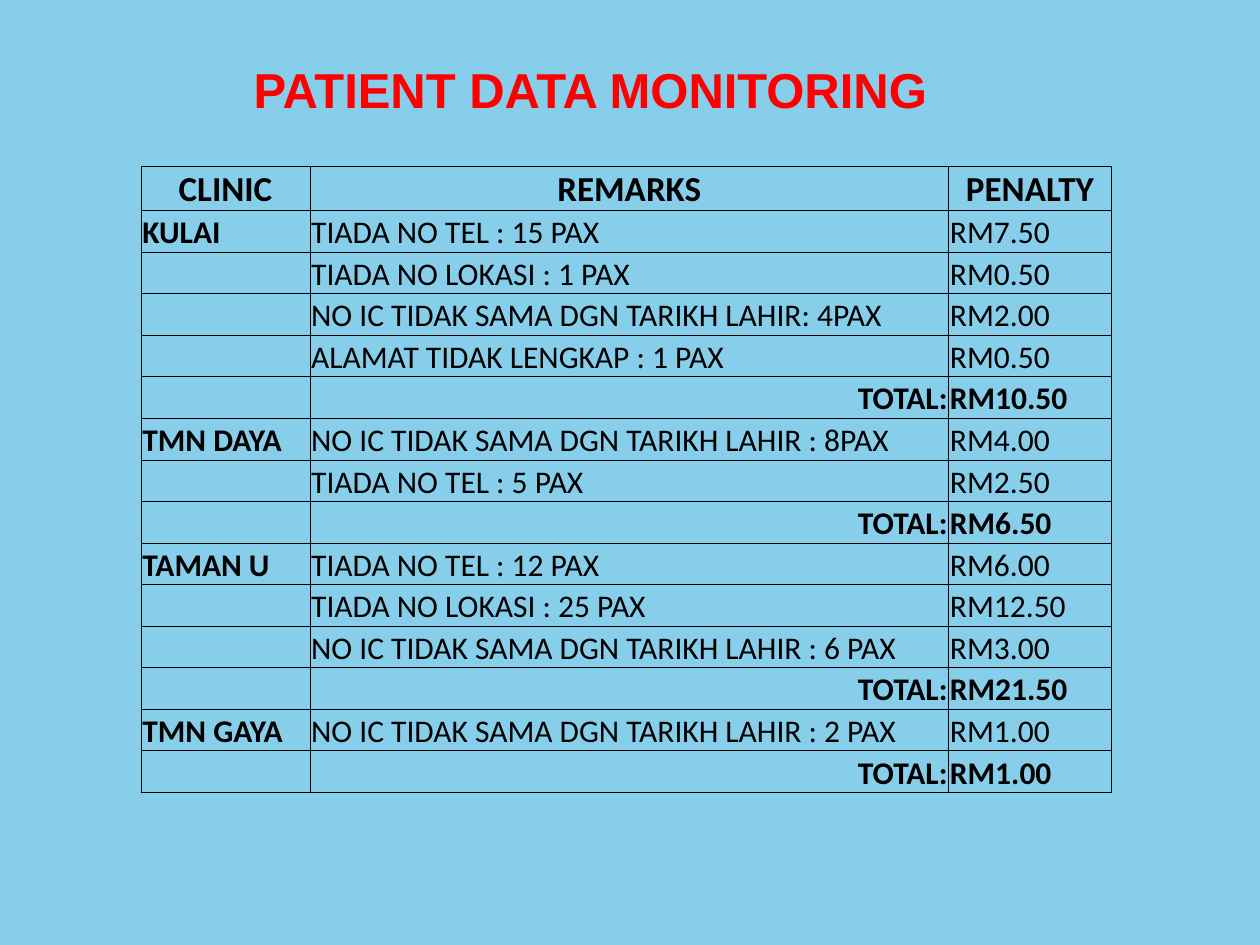
from dataclasses import dataclass

from lxml import etree
from pptx import Presentation
from pptx.dml.color import RGBColor
from pptx.enum.text import MSO_ANCHOR, PP_ALIGN
from pptx.oxml.ns import qn
from pptx.util import Inches, Pt

LEFT, CENTER, RIGHT = PP_ALIGN.LEFT, PP_ALIGN.CENTER, PP_ALIGN.RIGHT
TOP, BOTTOM = MSO_ANCHOR.TOP, MSO_ANCHOR.BOTTOM

TITLE = "PATIENT DATA MONITORING"
HEADS = ["CLINIC", "REMARKS", "PENALTY"]
CLINICS = {
    "KULAI": [
        ("TIADA NO TEL : 15 PAX", 7.5),
        ("TIADA NO LOKASI : 1 PAX", 0.5),
        ("NO IC TIDAK SAMA DGN TARIKH LAHIR: 4PAX", 2),
        ("ALAMAT TIDAK LENGKAP : 1 PAX", 0.5),
    ],
    "TMN DAYA": [
        ("NO IC TIDAK SAMA DGN TARIKH LAHIR : 8PAX", 4),
        ("TIADA NO TEL : 5 PAX", 2.5),
    ],
    "TAMAN U": [
        ("TIADA NO TEL : 12 PAX", 6),
        ("TIADA NO LOKASI : 25 PAX", 12.5),
        ("NO IC TIDAK SAMA DGN TARIKH LAHIR : 6 PAX", 3),
    ],
    "TMN GAYA": [
        ("NO IC TIDAK SAMA DGN TARIKH LAHIR : 2 PAX", 1),
    ],
}
COLS = [1.34, 5.07, 1.29]
ROW = 0.33


@dataclass
class Theme:
    back: str = "87CEEB"
    title: str = "FF0000"
    ink: str = "000000"
    title_font: str = "Arial"
    font: str = "Calibri"
    title_size: int = 28
    head_size: int = 20
    size: int = 18
    rule: float = 0.5


THEME = Theme()


def style(para, font, size, color, bold, align):
    para.alignment = align
    for run in para.runs:
        run.font.name = font
        run.font.size = Pt(size)
        run.font.bold = bold
        run.font.color.rgb = RGBColor.from_string(color)


def border(cell):
    props = cell._tc.get_or_add_tcPr()
    for side in ("a:lnL", "a:lnR", "a:lnT", "a:lnB"):
        line = etree.SubElement(props, qn(side), w=str(Pt(THEME.rule)))
        fill = etree.SubElement(line, qn("a:solidFill"))
        etree.SubElement(fill, qn("a:srgbClr"), val=THEME.ink)


def fill_cell(cell, text, size, bold, align):
    cell.margin_left = cell.margin_right = cell.margin_top = Inches(0.01)
    cell.margin_bottom = 0
    cell.vertical_anchor = BOTTOM
    border(cell)
    cell.fill.background()
    cell.text_frame.text = text
    style(cell.text_frame.paragraphs[0], THEME.font, size, THEME.ink, bold, align)


def list_rows():
    """Give each row as three (text, size, bold, align) cells, with totals."""
    size = THEME.size
    rows = [[(head, THEME.head_size, True, CENTER) for head in HEADS]]
    for clinic, items in CLINICS.items():
        for i, (remark, cost) in enumerate(items):
            rows.append([
                ("" if i else clinic, size, True, LEFT),
                (remark, size, False, LEFT),
                (f"RM{cost:.2f}", size, False, LEFT),
            ])
        total = sum(cost for _, cost in items)
        rows.append([
            ("", size, True, LEFT),
            ("TOTAL:", size, True, RIGHT),
            (f"RM{total:.2f}", size, True, LEFT),
        ])
    return rows


def add_title(slide):
    title = slide.shapes.title
    title.left, title.top = Inches(0.85), Inches(0.42)
    title.width, title.height = Inches(7.67), Inches(0.7)
    frame = title.text_frame
    frame.text = TITLE
    frame.vertical_anchor = TOP
    style(frame.paragraphs[0], THEME.title_font, THEME.title_size,
          THEME.title, True, CENTER)


def add_grid(slide):
    rows = list_rows()
    table = slide.shapes.add_table(
        len(rows), len(COLS), Inches(1.12), Inches(1.32),
        Inches(sum(COLS)), Inches(ROW * len(rows))).table
    table.first_row = table.horz_banding = False
    for col, width in zip(table.columns, COLS):
        col.width = Inches(width)
    for row, cells in zip(table.rows, rows):
        row.height = Inches(ROW)
        for cell, content in zip(row.cells, cells):
            fill_cell(cell, *content)


def main():
    deck = Presentation()
    deck.slide_width, deck.slide_height = Inches(10), Inches(7.5)
    slide = deck.slides.add_slide(deck.slide_layouts[5])
    back = slide.background.fill
    back.solid()
    back.fore_color.rgb = RGBColor.from_string(THEME.back)
    add_title(slide)
    add_grid(slide)
    deck.save("out.pptx")


if __name__ == "__main__":
    main()
